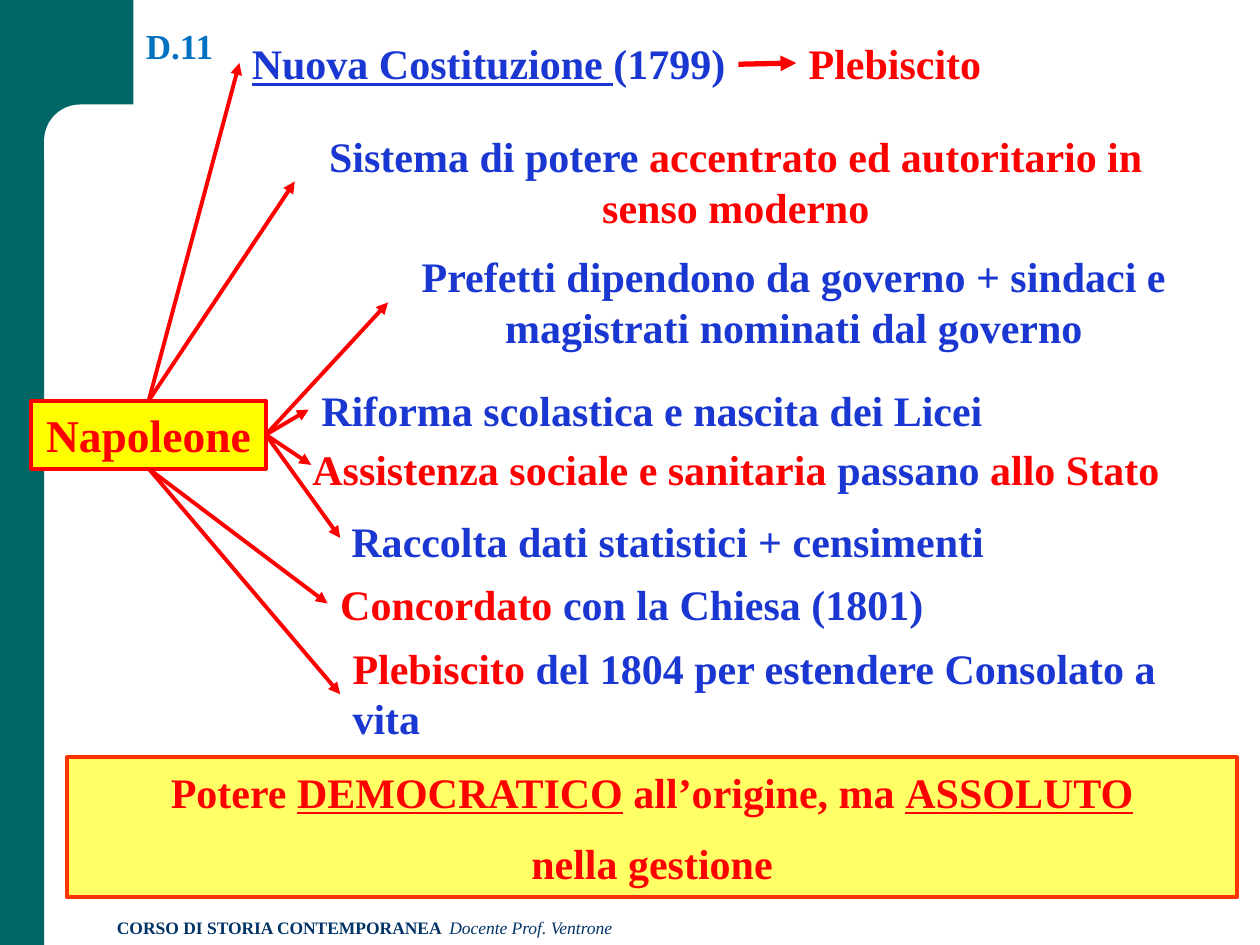
from lxml.etree import SubElement
from pptx import Presentation
from pptx.dml.color import RGBColor
from pptx.enum.shapes import MSO_CONNECTOR, MSO_SHAPE
from pptx.enum.text import MSO_ANCHOR, MSO_AUTO_SIZE, PP_ALIGN
from pptx.oxml.ns import qn
from pptx.util import Inches, Pt

COLORS = {
    "teal": "006666", "white": "FFFFFF", "navy": "003366", "sky": "0070C0",
    "red": "FF0000", "blue": "1B37D1", "yellow": "FFFF00",
    "pale": "FFFF66", "orange": "FF3300",
}
FONT = "Times New Roman"
LEFT, CENTER = PP_ALIGN.LEFT, PP_ALIGN.CENTER

TOPICS = [
    ((1.9, 0.25, 3.96, 0.5), LEFT, False,
     [("Nuova Costituzione ", "blue", "u"), ("(1799)", "blue")]),
    ((6.32, 0.25, 1.6, 0.5), LEFT, True, [("Plebiscito", "red")]),
    ((2.34, 0.99, 7, 0.91), CENTER, True,
     [("Sistema di potere ", "blue"),
      ("accentrato ed autoritario in senso moderno", "red")]),
    ((3.08, 1.94, 6.44, 0.91), CENTER, True,
     [("Prefetti dipendono da governo + sindaci e magistrati nominati dal governo", "blue")]),
    ((2.45, 3, 5.45, 0.5), CENTER, False,
     [("Riforma scolastica e nascita dei Licei", "blue")]),
    ((2.34, 3.47, 7, 0.5), CENTER, False,
     [("Assistenza sociale e sanitaria ", "red"), ("passano", "blue"),
      (" allo Stato ", "red")]),
    ((2.69, 4.04, 5.22, 0.5), CENTER, False,
     [("Raccolta dati statistici + censimenti", "blue")]),
    ((2.6, 4.54, 4.83, 0.5), CENTER, False,
     [("Concordato ", "red"), ("con la Chiesa (1801)", "blue")]),
    ((2.7, 5.05, 6.67, 0.91), LEFT, True,
     [("Plebiscito ", "red"), ("del 1804 per estendere Consolato a vita", "blue")]),
]
ARROW_TIPS = {
    "top": [(1.9, 0.5), (2.34, 1.44)],
    "right": [(3.08, 2.4), (2.45, 3.25), (2.47, 3.69), (2.7, 4.27)],
    "bottom": [(2.6, 4.79), (2.7, 5.51)],
}


def color(name):
    """Return the named colour."""
    return RGBColor.from_string(COLORS[name])


def write(paragraph, runs, size, alignment=LEFT):
    """Fill a paragraph with (text, colour, style) runs; style u underlines, i is plain italic."""
    paragraph.alignment = alignment
    for text, name, *style in runs:
        run = paragraph.add_run()
        run.text = text
        font = run.font
        font.name, font.size = FONT, Pt(size)
        font.bold = "i" not in style
        font.italic = "i" in style
        font.underline = "u" in style
        font.color.rgb = color(name)


def add_text(slide, box, runs, size, alignment=LEFT, wrap=True):
    """Add a one-paragraph text box and return its frame."""
    frame = slide.shapes.add_textbox(*map(Inches, box)).text_frame
    frame.word_wrap = wrap
    frame.auto_size = MSO_AUTO_SIZE.SHAPE_TO_FIT_TEXT
    write(frame.paragraphs[0], runs, size, alignment)
    return frame


def add_block(slide, box, fill, line=None, kind=MSO_SHAPE.RECTANGLE):
    """Add a filled shape with an optional outline."""
    shape = slide.shapes.add_shape(kind, *map(Inches, box))
    shape.shadow.inherit = False
    shape.fill.solid()
    shape.fill.fore_color.rgb = color(fill)
    if line:
        shape.line.color.rgb = color(line)
        shape.line.width = Pt(2.25)
    else:
        shape.line.fill.background()
    return shape


def add_arrow(slide, start, end, width=2.25):
    """Add a red straight arrow from start to end."""
    arrow = slide.shapes.add_connector(MSO_CONNECTOR.STRAIGHT, *map(Inches, (*start, *end)))
    arrow.line.color.rgb = color("red")
    arrow.line.width = Pt(width)
    SubElement(arrow.line._get_or_add_ln(), qn("a:tailEnd"), type="triangle")
    SubElement(arrow._element.spPr, qn("a:effectLst"))


def add_frame(slide, width, height):
    """Draw the teal corner, the slide number and the course footer."""
    add_block(slide, (0, 0, 0.35, height), "teal")
    add_block(slide, (0, 0, 1.06, 1.17), "teal")
    corner = add_block(slide, (0.35, 0.83, 6.06, 0.67), "white", kind=MSO_SHAPE.ROUNDED_RECTANGLE)
    corner.adjustments[0] = 0.43
    add_text(slide, (0.83, height - 0.27, width - 3.83, 0.27),
             [("CORSO DI STORIA CONTEMPORANEA  ", "navy"),
              ("Docente Prof. Ventrone", "navy", "i")], 10)
    number = add_text(slide, (1.06, 0, 1, 0.58), [("D.11", "sky")], 20)
    number.auto_size = MSO_AUTO_SIZE.NONE
    number.vertical_anchor = MSO_ANCHOR.BOTTOM
    number.paragraphs[0].line_spacing = 0.9


def add_hub(slide, box):
    """Draw the Napoleone box and the arrows fanning out from its sides."""
    left, top, width, height = box
    frame = add_block(slide, box, "yellow", "red").text_frame
    frame.word_wrap = True
    write(frame.paragraphs[0], [("Napoleone", "red")], 26, CENTER)
    sides = {
        "top": (left + width / 2, top),
        "right": (left + width, top + height / 2),
        "bottom": (left + width / 2, top + height),
    }
    for side, tips in ARROW_TIPS.items():
        for tip in tips:
            add_arrow(slide, sides[side], tip)


def add_topics(slide):
    """Place the topics and the arrow joining the first two."""
    for box, alignment, wrap, runs in TOPICS:
        add_text(slide, box, runs, 24, alignment, wrap)
    add_arrow(slide, (5.86, 0.51), (6.32, 0.5), 3)


def add_conclusion(slide, box):
    """Draw the closing statement in its box."""
    frame = add_block(slide, box, "pale", "orange").text_frame
    frame.word_wrap = True
    write(frame.paragraphs[0],
          [("Potere ", "red"), ("DEMOCRATICO", "red", "u"),
           (" all’origine, ma ", "red"), ("ASSOLUTO", "red", "u")], 24, CENTER)
    closing = frame.add_paragraph()
    closing.space_before = Pt(12)
    write(closing, [("nella gestione", "red")], 24, CENTER)


def main():
    """Build and save the presentation."""
    presentation = Presentation()
    presentation.slide_width, presentation.slide_height = Inches(10), Inches(7.5)
    slide = presentation.slides.add_slide(presentation.slide_layouts[6])
    add_frame(slide, 10, 7.5)
    add_hub(slide, (0.25, 3.18, 1.86, 0.54))
    add_topics(slide)
    add_conclusion(slide, (0.53, 6.01, 9.29, 1.11))
    presentation.save("out.pptx")


if __name__ == "__main__":
    main()
